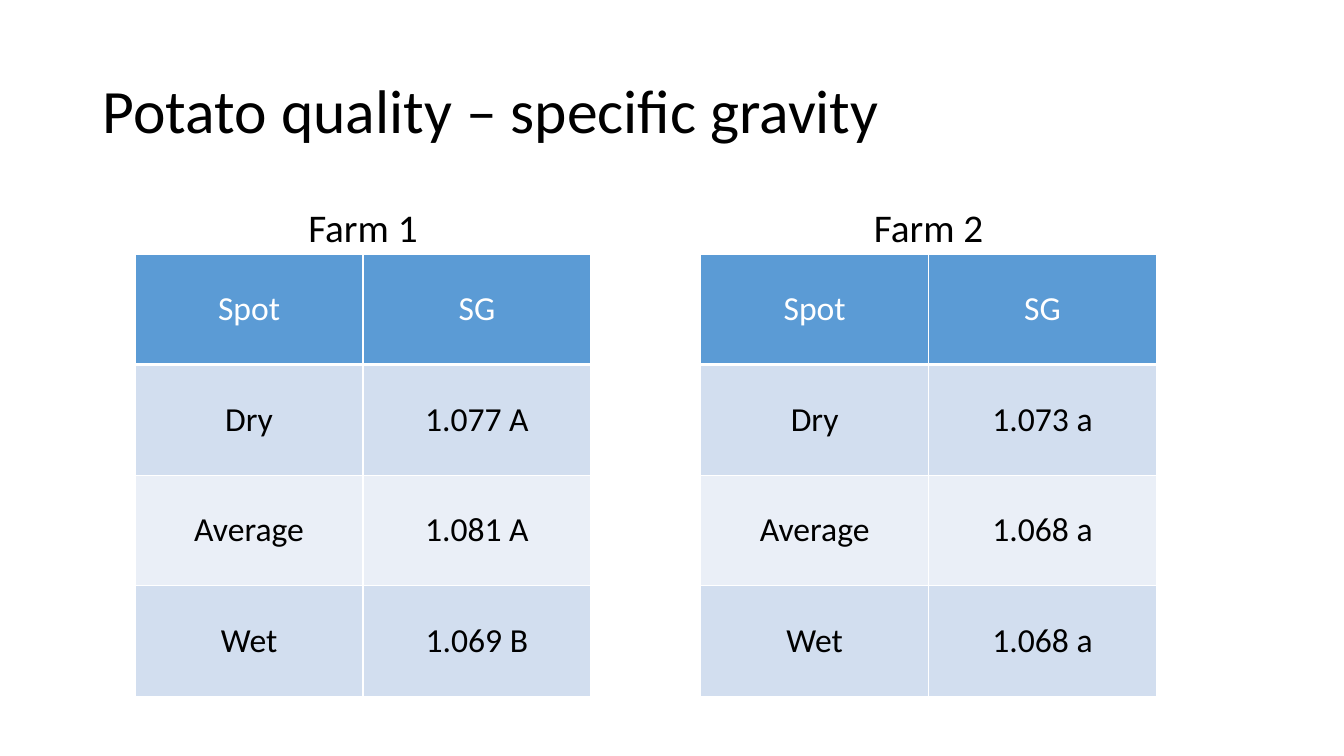
from lxml import etree
from pptx import Presentation
from pptx.dml.color import RGBColor
from pptx.enum.text import MSO_ANCHOR as Anchor, MSO_AUTO_SIZE as AutoSize, PP_ALIGN as Align
from pptx.oxml.ns import qn
from pptx.util import Inches, Pt

FONT = "Calibri"
BLACK, WHITE, HEADER_BLUE = "000000", "FFFFFF", "5B9BD5"
BANDS = ("D2DEEF", "EAEFF7")

HEADINGS = ("Spot", "SG")
FARMS = {
    "Farm 1": [("Dry", "1.077 A"), ("Average", "1.081 A"), ("Wet", "1.069 B")],
    "Farm 2": [("Dry", "1.073 a"), ("Average", "1.068 a"), ("Wet", "1.068 a")],
}


def color(value):
    return RGBColor.from_string(value)


def write(frame, text, size, fill=BLACK, align=Align.CENTER, anchor=Anchor.MIDDLE, spacing=None):
    frame.word_wrap = True
    frame.vertical_anchor = anchor
    paragraph = frame.paragraphs[0]
    paragraph.alignment = align
    paragraph.line_spacing = spacing
    run = paragraph.add_run()
    run.text = text
    run.font.name = FONT
    run.font.size = Pt(size)
    run.font.bold = False
    run.font.color.rgb = color(fill)


def set_borders(cell, bottom=1):
    properties = cell._tc.get_or_add_tcPr()
    for side, width in (("L", 1), ("R", 1), ("T", 1), ("B", bottom)):
        line = etree.SubElement(properties, qn(f"a:ln{side}"), w=str(Pt(width)))
        solid = etree.SubElement(line, qn("a:solidFill"))
        etree.SubElement(solid, qn("a:srgbClr"), val=WHITE)


def add_title(slide, text, left, top, width, height):
    title = slide.shapes.title
    title.left, title.top = Inches(left), Inches(top)
    title.width, title.height = Inches(width), Inches(height)
    write(title.text_frame, text, 44, align=Align.LEFT, spacing=0.9)


def add_farm(slide, farm, readings, left, top, width, height):
    # Caption, centred over the table
    caption_width, caption_height, table_offset = 3.37, 0.57, 0.55
    caption = slide.shapes.add_textbox(
        Inches(left + (width - caption_width) / 2), Inches(top),
        Inches(caption_width), Inches(caption_height))
    write(caption.text_frame, farm, 28, anchor=Anchor.TOP)
    caption.text_frame.auto_size = AutoSize.SHAPE_TO_FIT_TEXT

    # Table of specific gravity by spot
    rows = [HEADINGS, *readings]
    table = slide.shapes.add_table(
        len(rows), len(HEADINGS), Inches(left), Inches(top + table_offset),
        Inches(width), Inches(height - table_offset)).table
    for row, values in enumerate(rows):
        is_header = row == 0
        for column, value in enumerate(values):
            cell = table.cell(row, column)
            set_borders(cell, bottom=3 if is_header else 1)
            cell.fill.solid()
            cell.fill.fore_color.rgb = color(HEADER_BLUE if is_header else BANDS[(row - 1) % 2])
            cell.vertical_anchor = Anchor.MIDDLE
            write(cell.text_frame, value, 24, fill=WHITE if is_header else BLACK, anchor=None)


def main():
    deck = Presentation()
    deck.slide_width, deck.slide_height = Inches(13.33), Inches(7.5)
    slide = deck.slides.add_slide(deck.slide_layouts[5])

    add_title(slide, "Potato quality – specific gravity", 0.92, 0.4, 11.5, 1.45)
    for index, (farm, readings) in enumerate(FARMS.items()):
        add_farm(slide, farm, readings, 1.34 + index * 5.61, 1.97, 4.52, 4.94)

    deck.save("out.pptx")


if __name__ == "__main__":
    main()
